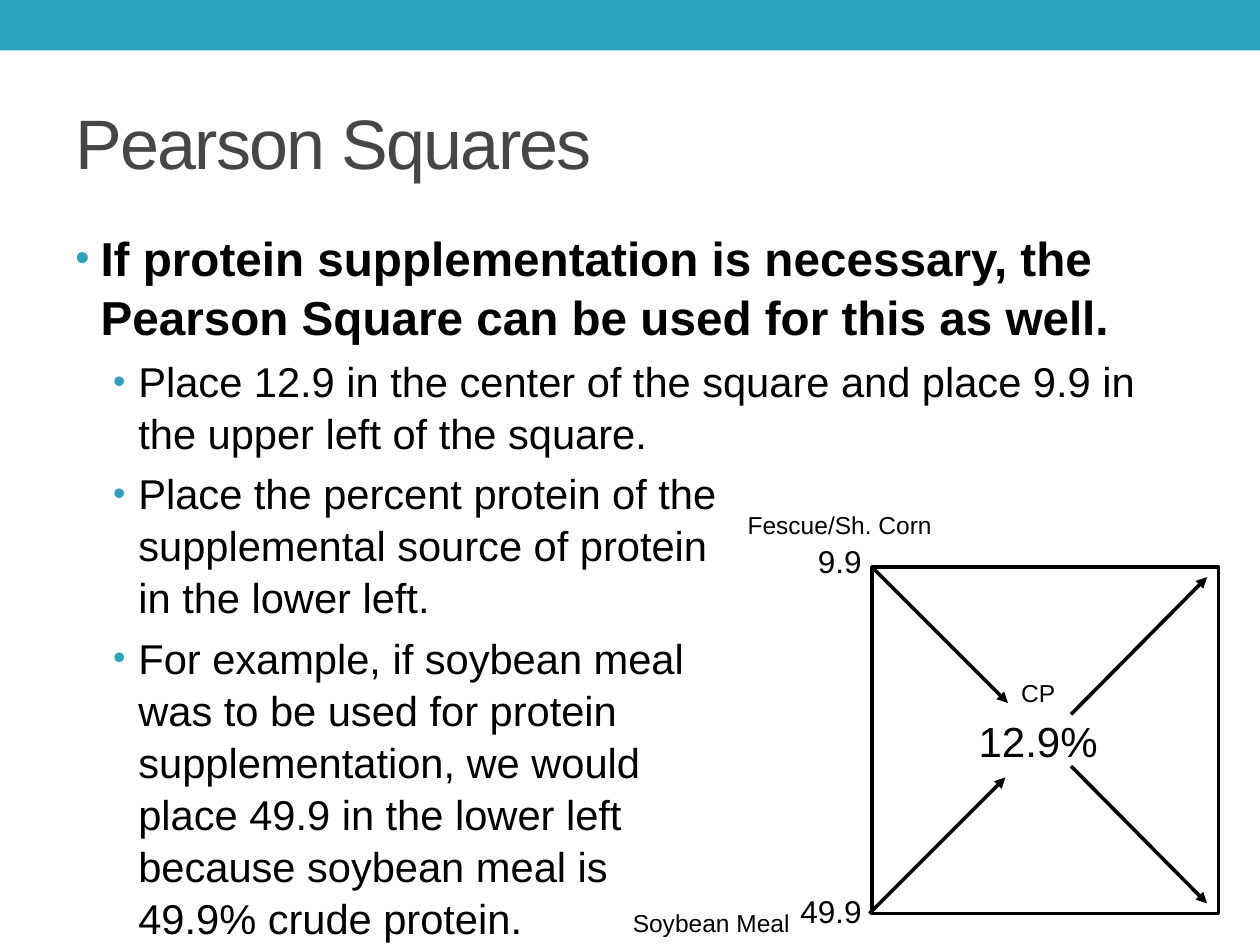
from pptx import Presentation
from pptx import util as u
from pptx.dml.color import RGBColor
from pptx.enum import shapes, text
from pptx.oxml.ns import qn
from lxml import etree

FONT = "Arial"
BLACK, TEAL, GRAY = "000000", "2DA2BF", "464646"
LINE_WIDTH = 2.08

TITLE = "Pearson Squares"
POINTS = [
    (0, ["If protein supplementation is necessary, the Pearson Square can be used for this as well."]),
    (1, ["Place 12.9 in the center of the square and place 9.9 in the upper left of the square."]),
    (1, ["Place the percent protein of the",
         "supplemental source of protein",
         "in the lower left."]),
    (1, ["For example, if soybean meal",
         "was to be used for protein",
         "supplementation, we would",
         "place 49.9 in the lower left",
         "because soybean meal is",
         "49.9% crude protein."]),
]
LEVELS = [
    {"size": 27.2, "bold": True, "indent": 0.2, "before": 5.4},
    {"size": 23.8, "bold": False, "indent": 0.5, "before": 4.8},
]
HANGING = 0.2

SQUARE = (6.92, 4.5, 2.75, 2.75)
ARROWS = [
    ((6.92, 4.5), (8, 5.58)),
    ((8.5, 6.08), (9.58, 7.17)),
    ((6.9, 7.25), (7.98, 6.17)),
    ((8.5, 5.67), (9.58, 4.58)),
]
LABELS = [
    ("12.9%", 24, (7.66, 5.63, 1.16, 0.5)),
    ("9.9", 18, (6.39, 4.25, 0.55, 0.4)),
    ("49.9", 18, (6.25, 7.03, 0.69, 0.4)),
    ("Fescue/Sh. Corn", 14, (5.83, 4, 1.67, 0.34)),
    ("Soybean Meal", 14, (4.92, 7.16, 1.45, 0.34)),
    ("CP", 14, (8, 5.33, 0.48, 0.34)),
]


def inches(values):
    return [u.Inches(value) for value in values]


def color(hex_code):
    return RGBColor.from_string(hex_code)


def add_run(paragraph, words, size, hex_code=BLACK, bold=False):
    run = paragraph.add_run()
    run.text = words
    run.font.name = FONT
    run.font.size = u.Pt(size)
    run.font.bold = bold
    run.font.color.rgb = color(hex_code)
    return run


def add_bullet(paragraph, indent):
    properties = paragraph._p.get_or_add_pPr()
    properties.set("marL", str(u.Inches(indent)))
    properties.set("indent", str(u.Inches(-HANGING)))
    bullet_color = etree.SubElement(properties, qn("a:buClr"))
    etree.SubElement(bullet_color, qn("a:srgbClr"), val=TEAL)
    etree.SubElement(properties, qn("a:buSzPct"), val="85000")
    etree.SubElement(properties, qn("a:buFont"), typeface=FONT)
    etree.SubElement(properties, qn("a:buChar"), char="•")


def add_rectangle(slide, place):
    rectangle = slide.shapes.add_shape(shapes.MSO_SHAPE.RECTANGLE, *inches(place))
    rectangle.shadow.inherit = False
    return rectangle


def add_banner(slide):
    banner = add_rectangle(slide, (0, 0, 10, 0.4))
    banner.fill.solid()
    banner.fill.fore_color.rgb = color(TEAL)
    banner.line.fill.background()


def add_title(slide):
    title = slide.shapes.title
    title.left, title.top, title.width, title.height = inches((0.5, 0.58, 9, 1.08))
    title.text_frame.vertical_anchor = text.MSO_ANCHOR.MIDDLE
    paragraph = title.text_frame.paragraphs[0]
    paragraph.alignment = text.PP_ALIGN.LEFT
    heading = add_run(paragraph, TITLE, 40, GRAY)
    heading.font._element.set("spc", "-100")


def add_points(slide):
    frame = slide.shapes.add_textbox(*inches((0.5, 1.75, 9, 5.33))).text_frame
    frame.word_wrap = True
    for index, (level, lines) in enumerate(POINTS):
        style = LEVELS[level]
        paragraph = frame.add_paragraph() if index else frame.paragraphs[0]
        paragraph.level = level
        paragraph.line_spacing = 1.04
        if index:
            paragraph.space_before = u.Pt(style["before"])
        add_bullet(paragraph, style["indent"])
        for number, line in enumerate(lines):
            if number:
                paragraph.add_line_break()
            add_run(paragraph, line, style["size"], bold=style["bold"])


def add_arrow(slide, start, end):
    arrow = slide.shapes.add_connector(
        shapes.MSO_CONNECTOR.STRAIGHT, *inches(start + end))
    arrow.line.color.rgb = color(BLACK)
    arrow.line.width = u.Pt(LINE_WIDTH)
    etree.SubElement(arrow.line._get_or_add_ln(), qn("a:tailEnd"), type="triangle")
    etree.SubElement(arrow._element.spPr, qn("a:effectLst"))


def add_label(slide, words, size, place):
    frame = slide.shapes.add_textbox(*inches(place)).text_frame
    frame.word_wrap = False
    frame.auto_size = text.MSO_AUTO_SIZE.SHAPE_TO_FIT_TEXT
    paragraph = frame.paragraphs[0]
    paragraph.alignment = text.PP_ALIGN.CENTER
    add_run(paragraph, words, size)


def main():
    deck = Presentation()
    deck.slide_width, deck.slide_height = inches((10, 7.5))
    slide = deck.slides.add_slide(deck.slide_layouts[5])
    add_banner(slide)
    add_title(slide)
    add_points(slide)
    square = add_rectangle(slide, SQUARE)
    square.fill.background()
    square.line.color.rgb = color(BLACK)
    square.line.width = u.Pt(LINE_WIDTH)
    for start, end in ARROWS:
        add_arrow(slide, start, end)
    for words, size, place in LABELS:
        add_label(slide, words, size, place)
    deck.save("out.pptx")


if __name__ == "__main__":
    main()
